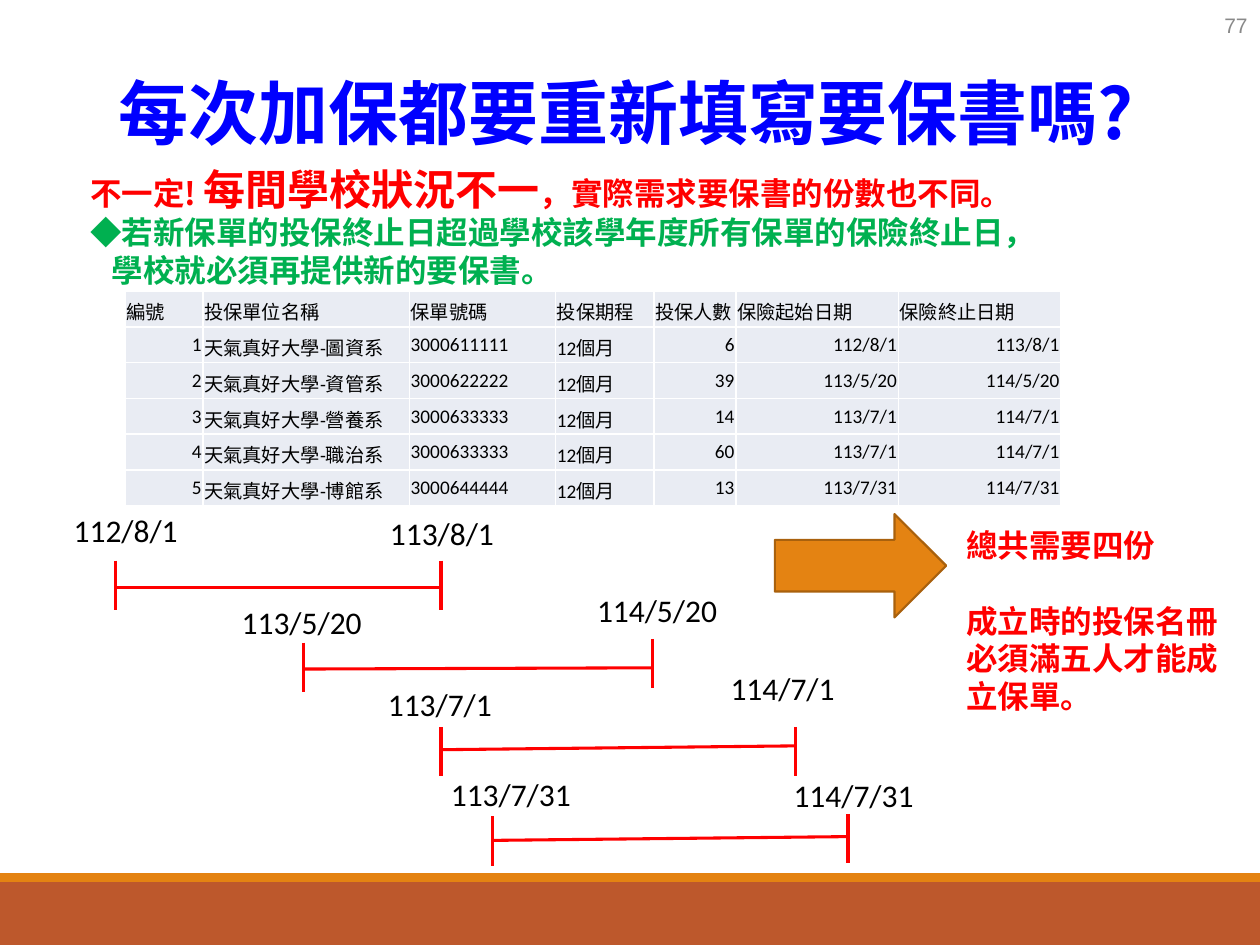
from dataclasses import dataclass

from lxml import etree
from pptx import Presentation
from pptx import util as u
from pptx.dml.color import RGBColor
from pptx.enum import shapes, text
from pptx.oxml import ns

RED = RGBColor(0xFF, 0, 0)
BLUE = RGBColor(0, 0, 0xFF)
GREEN = RGBColor(0, 0xB0, 0x50)
BLACK = RGBColor(0, 0, 0)
GRAY = RGBColor(0x89, 0x89, 0x89)
ORANGE = RGBColor(0xE4, 0x83, 0x12)
DARK_ORANGE = RGBColor(0xA9, 0x61, 0x0D)
RUST = RGBColor(0xBD, 0x58, 0x2C)
CELL_FILL = RGBColor(0xE9, 0xEC, 0xF3)
CJK = "Noto Sans CJK SC"
LEFT, CENTER, RIGHT = text.PP_ALIGN.LEFT, text.PP_ALIGN.CENTER, text.PP_ALIGN.RIGHT
TICK = 0.39


@dataclass
class Mark:
    date: str
    x: float
    tick_top: float
    bar_y: float
    label_left: float
    label_top: float


@dataclass
class Period:
    start: Mark
    end: Mark
    align: text.PP_ALIGN = LEFT


PERIODS = [
    Period(Mark("112/8/1", 0.92, 4.45, 4.66, 0.47, 4.01),
           Mark("113/8/1", 3.5, 4.45, 4.66, 2.98, 4.03), RIGHT),
    Period(Mark("113/5/20", 2.41, 5.1, 5.31, 1.82, 4.74),
           Mark("114/5/20", 5.18, 5.07, 5.3, 4.64, 4.64)),
    Period(Mark("113/7/1", 3.5, 5.77, 5.95, 2.98, 5.39),
           Mark("114/7/1", 6.31, 5.77, 5.92, 5.7, 5.26)),
    Period(Mark("113/7/31", 3.91, 6.48, 6.67, 3.48, 6.1),
           Mark("114/7/31", 6.73, 6.46, 6.64, 6.2, 6.11)),
]

HEADERS = ["編號", "投保單位名稱", "保單號碼", "投保期程", "投保人數", "保險起始日期", "保險終止日期"]
POLICIES = [
    ("圖資系", "3000611111", "6", "112/8/1", "113/8/1"),
    ("資管系", "3000622222", "39", "113/5/20", "114/5/20"),
    ("營養系", "3000633333", "14", "113/7/1", "114/7/1"),
    ("職治系", "3000633333", "60", "113/7/1", "114/7/1"),
    ("博館系", "3000644444", "13", "113/7/31", "114/7/31"),
]
COLUMN_WIDTHS = [0.62, 1.64, 1.16, 0.78, 0.65, 1.29, 1.29]
RIGHT_COLUMNS = {0, 4, 5, 6}
TABLE_HEIGHT = 1.7


def add_span(para, content: str, *, size: float, color: RGBColor,
             font: str = "Calibri", bold: bool = False) -> None:
    span = para.add_run()
    span.text = content
    span.font.size = u.Pt(size)
    span.font.name = font
    span.font.bold = bold
    span.font.color.rgb = color
    if bold:
        east_asian = etree.SubElement(span.font._element, ns.qn("a:ea"))
        east_asian.set("typeface", CJK)


def add_box(page, left: float, top: float, width: float, height: float, wrap: bool = True):
    box = page.shapes.add_textbox(*map(u.Inches, (left, top, width, height)))
    box.text_frame.word_wrap = wrap
    return box


def add_block(page, kind, left: float, top: float, width: float, height: float,
              fill: RGBColor, line: RGBColor | None = None) -> None:
    block = page.shapes.add_shape(kind, *map(u.Inches, (left, top, width, height)))
    block.shadow.inherit = False
    block.fill.solid()
    block.fill.fore_color.rgb = fill
    if line is None:
        block.line.fill.background()
    else:
        block.line.color.rgb = line
        block.line.width = u.Pt(1.25)


def add_line(page, x1: float, y1: float, x2: float, y2: float) -> None:
    line = page.shapes.add_connector(
        shapes.MSO_CONNECTOR.STRAIGHT, *map(u.Inches, (x1, y1, x2, y2)))
    line.line.color.rgb = RED
    line.line.width = u.Pt(1.75)
    etree.SubElement(line._element.spPr, ns.qn("a:effectLst"))


def add_period(page, period: Period) -> None:
    for mark in (period.start, period.end):
        add_line(page, mark.x, mark.tick_top, mark.x, mark.tick_top + TICK)
        width = 0.13 * len(mark.date) + 0.13
        box = add_box(page, mark.label_left, mark.label_top, width, 0.4, wrap=False)
        box.text_frame.auto_size = text.MSO_AUTO_SIZE.SHAPE_TO_FIT_TEXT
        para = box.text_frame.paragraphs[0]
        para.alignment = period.align
        add_span(para, mark.date, size=18, color=BLACK)
    add_line(page, period.end.x, period.end.bar_y, period.start.x, period.start.bar_y)


def set_borders(cell) -> None:
    properties = cell._tc.get_or_add_tcPr()
    for index, side in enumerate(("lnL", "lnR", "lnT", "lnB")):
        border = etree.Element(ns.qn(f"a:{side}"), w=str(u.Pt(0.96)))
        fill = etree.SubElement(border, ns.qn("a:solidFill"))
        etree.SubElement(fill, ns.qn("a:srgbClr"), val="FFFFFF")
        properties.insert(index, border)


def add_policy_table(page) -> None:
    rows = [HEADERS] + [
        [str(number), f"天氣真好大學-{unit}", policy, "12個月", people, start, end]
        for number, (unit, policy, people, start, end) in enumerate(POLICIES, 1)]
    frame = page.shapes.add_table(
        len(rows), len(HEADERS),
        *map(u.Inches, (0.99, 2.31, sum(COLUMN_WIDTHS), TABLE_HEIGHT)))
    table = frame.table
    table.first_row = table.horz_banding = False
    for column, width in zip(table.columns, COLUMN_WIDTHS):
        column.width = u.Inches(width)
    for r, values in enumerate(rows):
        table.rows[r].height = u.Inches(TABLE_HEIGHT / len(rows))
        for c, value in enumerate(values):
            cell = table.cell(r, c)
            cell.margin_left = cell.margin_right = u.Inches(0.01)
            cell.fill.solid()
            cell.fill.fore_color.rgb = CELL_FILL
            set_borders(cell)
            para = cell.text_frame.paragraphs[0]
            para.alignment = RIGHT if r and c in RIGHT_COLUMNS else LEFT
            add_span(para, value, size=11, color=BLACK)


def add_title(page) -> None:
    title = page.shapes.title
    title.left, title.top, title.width, title.height = map(u.Inches, (-0.09, 0.58, 10.12, 1.25))
    frame = title.text_frame
    frame.auto_size = text.MSO_AUTO_SIZE.NONE
    frame.vertical_anchor = text.MSO_ANCHOR.TOP
    para = frame.paragraphs[0]
    para.alignment = CENTER
    para.line_spacing = 0.9
    add_span(para, "每次加保都要重新填寫要保書嗎?", size=40, color=BLUE, font=CJK, bold=True)


def add_answer(page) -> None:
    frame = add_box(page, 0.62, 1.2, 9.13, 1.11).text_frame
    para = frame.paragraphs[0]
    para.line_spacing = u.Pt(32)
    for content, size in (("不一定! ", 18), ("每間學校狀況不一", 24),
                          ("，實際需求要保書的份數也不同。", 18)):
        add_span(para, content, size=size, color=RED, font=CJK, bold=True)
    for content, indent in (("◆若新保單的投保終止日超過學校該學年度所有保單的保險終止日，", 0),
                            ("學校就必須再提供新的要保書。", 0.17)):
        para = frame.add_paragraph()
        para.line_spacing = u.Pt(21.5)
        para._p.get_or_add_pPr().set("marL", str(u.Inches(indent)))
        add_span(para, content, size=18, color=GREEN, font="Arial", bold=True)


def add_conclusion(page) -> None:
    add_block(page, shapes.MSO_SHAPE.RIGHT_ARROW, 6.15, 4.08, 1.36, 0.82, ORANGE, DARK_ORANGE)
    frame = add_box(page, 7.57, 4.13, 2.29, 1.62).text_frame
    first, second = frame.paragraphs[0], frame.add_paragraph()
    second.space_before = u.Pt(21.5)
    for para, content in ((first, "總共需要四份"),
                          (second, "成立時的投保名冊必須滿五人才能成立保單。")):
        para.line_spacing = u.Pt(21.5)
        add_span(para, content, size=18, color=RED, font=CJK, bold=True)


def add_page_number(page) -> None:
    frame = add_box(page, 8.92, 0, 1.08, 0.4).text_frame
    frame.vertical_anchor = text.MSO_ANCHOR.MIDDLE
    frame.paragraphs[0].alignment = RIGHT
    add_span(frame.paragraphs[0], "77", size=12, color=GRAY, font="Arial")


def main() -> None:
    deck = Presentation()
    deck.slide_width, deck.slide_height = u.Inches(10), u.Inches(7.5)
    page = deck.slides.add_slide(deck.slide_layouts[5])
    add_block(page, shapes.MSO_SHAPE.RECTANGLE, 0, 7, 10, 0.5, RUST)
    add_block(page, shapes.MSO_SHAPE.RECTANGLE, 0, 6.93, 10, 0.07, ORANGE)
    add_title(page)
    add_answer(page)
    add_policy_table(page)
    for period in PERIODS:
        add_period(page, period)
    add_conclusion(page)
    add_page_number(page)
    deck.save("out.pptx")


if __name__ == "__main__":
    main()
